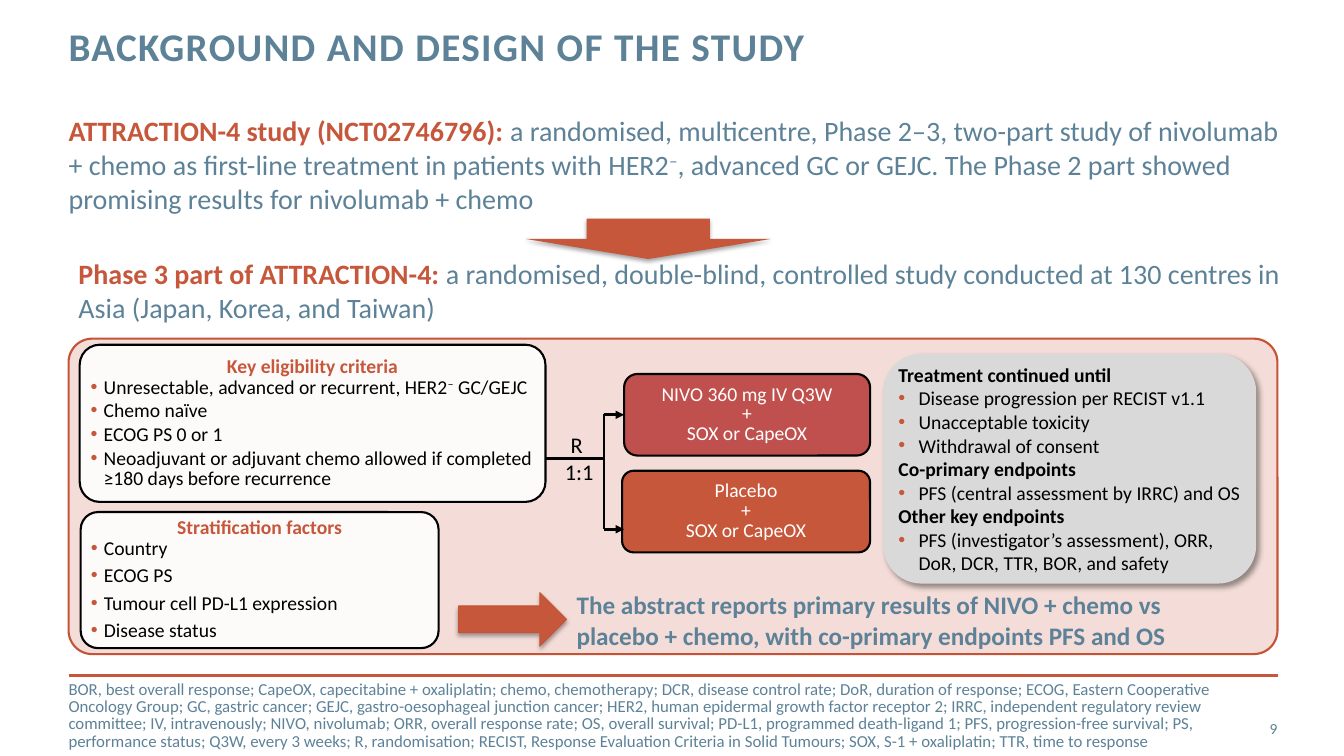
from lxml import etree
from pptx import Presentation
from pptx.dml.color import RGBColor
from pptx.enum import shapes, text
from pptx.oxml import ns
from pptx.util import Inches, Pt

RED = RGBColor(0xC6, 0x57, 0x3B)
DARK_RED = RGBColor(0xC5, 0x53, 0x36)
CRIMSON = RGBColor(0xC0, 0x50, 0x4D)
PINK = RGBColor(0xF4, 0xDD, 0xD8)
BLUE = RGBColor(0x5D, 0x82, 0x98)
GREY = RGBColor(0xD9, 0xD9, 0xD9)
CREAM = RGBColor(0xFD, 0xFB, 0xFA)
BLACK = RGBColor(0, 0, 0)
WHITE = RGBColor(0xFF, 0xFF, 0xFF)
CENTER = text.PP_ALIGN.CENTER
MIDDLE = text.MSO_ANCHOR.MIDDLE
SHAPE = shapes.MSO_SHAPE

presentation = Presentation()
presentation.slide_width = Inches(13.33)
presentation.slide_height = Inches(7.5)
slide = presentation.slides.add_slide(presentation.slide_layouts[5])


def add_block(kind, place, fill=None, line=None, line_width=1.5, radius=None, shadow=None):
    shape = slide.shapes.add_shape(kind, *[Inches(value) for value in place])
    shape.shadow.inherit = False
    shape.fill.solid()
    shape.fill.fore_color.rgb = fill
    if line is None:
        shape.line.fill.background()
    else:
        shape.line.color.rgb = line
        shape.line.width = Pt(line_width)
    if radius:
        shape.adjustments[0] = radius
    if shadow:
        blur, distance, angle, opacity = shadow
        effects = shape._element.spPr.find(ns.qn("a:effectLst"))
        outer = etree.SubElement(effects, ns.qn("a:outerShdw"), blurRad=str(Pt(blur)),
                                 dist=str(Pt(distance)), dir=str(angle * 60000), rotWithShape="0")
        color = etree.SubElement(outer, ns.qn("a:srgbClr"), val="000000")
        etree.SubElement(color, ns.qn("a:alpha"), val=str(opacity * 1000))
    return shape


def write(shape, lines, size, margins=(0.1, 0.05, 0.1, 0.05), anchor=text.MSO_ANCHOR.TOP,
          align=text.PP_ALIGN.LEFT, spacing=None, indent=0.13, gaps=(0, 0)):
    frame = shape.text_frame
    frame.word_wrap = True
    frame.vertical_anchor = anchor
    frame.margin_left, frame.margin_top, frame.margin_right, frame.margin_bottom = [
        Inches(margin) for margin in margins]
    for index, (bulleted, runs) in enumerate(lines):
        paragraph = frame.paragraphs[0] if index == 0 else frame.add_paragraph()
        paragraph.alignment = text.PP_ALIGN.LEFT if bulleted else align
        if spacing:
            paragraph.line_spacing = spacing
        if bulleted:
            paragraph.space_before, paragraph.space_after = Pt(gaps[0]), Pt(gaps[1])
            properties = paragraph._p.get_or_add_pPr()
            properties.set("marL", str(Inches(indent)))
            properties.set("indent", str(-Inches(indent)))
            bullet_color = etree.SubElement(properties, ns.qn("a:buClr"))
            etree.SubElement(bullet_color, ns.qn("a:srgbClr"), val=str(RED))
            etree.SubElement(properties, ns.qn("a:buFont"), typeface="Arial")
            etree.SubElement(properties, ns.qn("a:buChar"), char="•")
        paragraph.font.name = "Calibri"
        paragraph.font.size = Pt(size)
        for words, color, bold in runs:
            run = paragraph.add_run()
            run.text = words
            run.font.name = "Calibri"
            run.font.size = Pt(size)
            run.font.color.rgb = color
            run.font.bold = bold
            if words == "−":
                run.font._element.set("baseline", "30000")


title = slide.shapes.title
title.left, title.top, title.width, title.height = [Inches(value) for value in (0.68, 0.27, 9.56, 0.88)]
write(title, [(False, [("BACKGROUND AND DESIGN OF THE STUDY", BLUE, True)])], 28,
      margins=(0, 0, 0, 0), spacing=Pt(30))
title.text_frame.auto_size = text.MSO_AUTO_SIZE.NONE
title.text_frame.paragraphs[0].runs[0].font._element.set("spc", "100")

abbreviations = (
    "BOR, best overall response; CapeOX, capecitabine + oxaliplatin; chemo, chemotherapy; "
    "DCR, disease control rate; DoR, duration of response; ECOG, Eastern Cooperative Oncology Group; "
    "GC, gastric cancer; GEJC, gastro-oesophageal junction cancer; HER2, human epidermal growth factor "
    "receptor 2; IRRC, independent regulatory review committee; IV, intravenously; NIVO, nivolumab; "
    "ORR, overall response rate; OS, overall survival; PD-L1, programmed death-ligand 1; "
    "PFS, progression-free survival; PS, performance status; Q3W, every 3 weeks; R, randomisation; "
    "RECIST, Response Evaluation Criteria in Solid Tumours; SOX, S-1 + oxaliplatin; TTR, time to response")
footnote = slide.shapes.add_textbox(Inches(0.68), Inches(6.76), Inches(11.5), Inches(0.69))
write(footnote, [(False, [(abbreviations, BLUE, False)])], 12,
      margins=(0, 0, 0, 0), anchor=MIDDLE, spacing=0.85)

page_number = slide.shapes.add_textbox(Inches(11.81), Inches(7.03), Inches(0.86), Inches(0.4))
write(page_number, [(False, [("9", BLUE, False)])], 11,
      margins=(0, 0, 0, 0), anchor=MIDDLE, align=text.PP_ALIGN.RIGHT)

study = slide.shapes.add_textbox(Inches(0.68), Inches(1.08), Inches(12.22), Inches(1.11))
write(study, [(False, [
    ("ATTRACTION-4 study (NCT02746796): ", RED, True),
    ("a randomised, multicentre, Phase 2–3, two-part study of nivolumab + chemo as first-line "
     "treatment in patients with HER2", BLUE, False),
    ("−", BLUE, False),
    (", advanced GC or GEJC. The Phase 2 part showed promising results for nivolumab + chemo", BLUE, False),
])], 20, margins=(0, 0.05, 0.1, 0.05))

phase_3 = slide.shapes.add_textbox(Inches(0.68), Inches(2.5), Inches(12.22), Inches(0.77))
write(phase_3, [(False, [
    ("Phase 3 part of ATTRACTION-4: ", RED, True),
    ("a randomised, double-blind, controlled study conducted at 130 centres in Asia "
     "(Japan, Korea, and Taiwan)", BLUE, False),
])], 20)

arrow_shadow = (3.1, 1.8, 90, 35)
add_block(SHAPE.DOWN_ARROW, (5.21, 2.17, 2.44, 0.4), RED, shadow=arrow_shadow)
add_block(SHAPE.ROUNDED_RECTANGLE, (0.68, 3.36, 11.99, 3.13), PINK, DARK_RED, radius=0.075)

endpoints = add_block(SHAPE.ROUNDED_RECTANGLE, (8.76, 3.51, 3.7, 2.28), GREY, shadow=(4, 3, 45, 40))
endpoint_lines = [
    (False, "Treatment continued until"),
    (True, "Disease progression per RECIST v1.1"),
    (True, "Unacceptable toxicity"),
    (True, "Withdrawal of consent"),
    (False, "Co-primary endpoints"),
    (True, "PFS (central assessment by IRRC) and OS"),
    (False, "Other key endpoints"),
    (True, "PFS (investigator’s assessment), ORR, DoR, DCR, TTR, BOR, and safety"),
]
write(endpoints, [(bulleted, [(words, BLACK, not bulleted)]) for bulleted, words in endpoint_lines],
      14, margins=(0.04, 0.05, 0.04, 0.05), anchor=MIDDLE, indent=0.2)

criteria = [
    ((0.79, 3.42, 4.62, 1.56), 2, "Key eligibility criteria", [
        ["Unresectable, advanced or recurrent, HER2", "−", " GC/GEJC"],
        ["Chemo naïve"],
        ["ECOG PS 0 or 1"],
        ["Neoadjuvant or adjuvant chemo allowed if completed ≥180 days before recurrence"]]),
    ((0.8, 5.08, 3.55, 1.35), 4.5, "Stratification factors", [
        ["Country"], ["ECOG PS"], ["Tumour cell PD-L1 expression"], ["Disease status"]]),
]
for place, gap_after, heading, items in criteria:
    box = add_block(SHAPE.ROUNDED_RECTANGLE, place, CREAM, BLACK, radius=0.128)
    lines = [(False, [(heading, RED, True)])]
    lines += [(True, [(part, BLACK, False) for part in item]) for item in items]
    write(box, lines, 14, margins=[0.05] * 4, anchor=MIDDLE, align=CENTER,
          spacing=Pt(14), gaps=(1, gap_after))

arms = []
for place, fill, radius, drug in [
    ((6.19, 3.71, 2.44, 0.81), CRIMSON, 0.164, "NIVO 360 mg IV Q3W"),
    ((6.17, 4.67, 2.46, 0.81), RED, 0.141, "Placebo"),
]:
    arm = add_block(SHAPE.ROUNDED_RECTANGLE, place, fill, BLACK, radius=radius)
    write(arm, [(False, [(words, WHITE, False)]) for words in (drug, "+", "SOX or CapeOX")],
          14, margins=[0.05] * 4, anchor=MIDDLE, align=CENTER, spacing=Pt(14))
    arms.append(arm)

ratio = slide.shapes.add_textbox(Inches(5.5), Inches(4.23), Inches(0.49), Inches(0.64))
write(ratio, [(False, [(words, BLACK, False)]) for words in ("R ", "1:1")], 16, align=CENTER)
ratio.text_frame.word_wrap = False

abstract = slide.shapes.add_textbox(Inches(5.62), Inches(5.8), Inches(6.19), Inches(0.71))
write(abstract, [(False, [(
    "The abstract reports primary results of NIVO + chemo vs placebo + chemo, "
    "with co-primary endpoints PFS and OS", BLUE, True)])], 18)
add_block(SHAPE.RIGHT_ARROW, (4.55, 5.88, 1.07, 0.53), RED, DARK_RED, line_width=0.75, shadow=arrow_shadow)

for start_x, start_y, end_x, end_y, color, arrow, target in [
    (0.68, 6.7, 12.68, 6.7, RED, False, None),
    (5.41, 4.55, 5.99, 4.55, BLACK, False, None),
    (5.99, 4.11, 5.99, 5.25, BLACK, False, None),
    (5.99, 4.11, 6.19, 4.11, BLACK, True, arms[0]),
    (5.99, 5.25, 6.19, 5.25, BLACK, True, None),
]:
    connector = slide.shapes.add_connector(shapes.MSO_CONNECTOR.STRAIGHT, Inches(start_x),
                                           Inches(start_y), Inches(end_x), Inches(end_y))
    if target is not None:
        connector.begin_y = target.top + target.height // 2
        connector.end_connect(target, 1)
    connector.line.color.rgb = color
    connector.line.width = Pt(2)
    if arrow:
        etree.SubElement(connector.line._get_or_add_ln(), ns.qn("a:tailEnd"), type="triangle")
    etree.SubElement(connector._element.spPr, ns.qn("a:effectLst"))

presentation.save("out.pptx")
